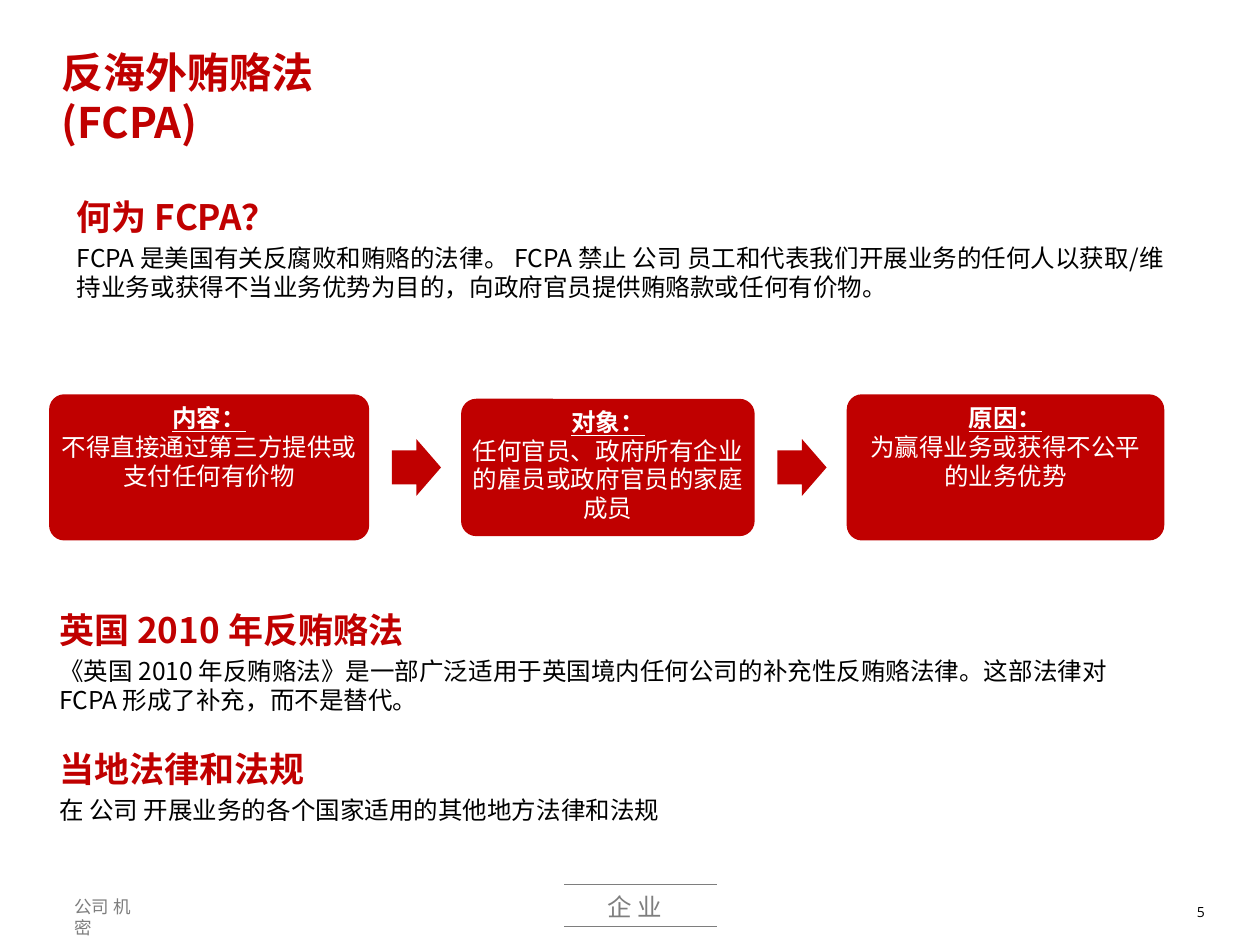
from lxml.etree import SubElement
from pptx import Presentation
from pptx.dml.color import RGBColor
from pptx.enum.shapes import MSO_CONNECTOR as Connector, MSO_SHAPE as Shape
from pptx.enum.text import PP_ALIGN as Align
from pptx.oxml.ns import qn
from pptx.util import Inches, Pt

COLORS = {"red": "C00000", "black": "000000", "white": "FFFFFF", "gray": "7E7E7E"}
CJK_FONT = "Noto Sans CJK SC"


def add_paragraph(frame, text, *, size=14, color="black", bold=False, underline=False,
                  font_name=CJK_FONT, align=Align.LEFT, before=0, spacing=None):
    """Write one formatted paragraph, using the frame's first one while it is empty."""
    paragraph = frame.paragraphs[0] if not frame.text else frame.add_paragraph()
    paragraph.alignment = align
    paragraph.space_before = Pt(before)
    if spacing is not None:
        paragraph.line_spacing = spacing
    run = paragraph.add_run()
    run.text = text
    font = run.font
    font.name, font.size, font.bold, font.underline = font_name, Pt(size), bold, underline
    font.color.rgb = RGBColor.from_string(COLORS[color])
    SubElement(run._r.get_or_add_rPr(), qn("a:ea")).set("typeface", font_name)


def add_text_frame(slide, left, top, width, height, inset_top=0.0, wrap=True):
    """Add a text box without side margins and return its frame."""
    box = slide.shapes.add_textbox(Inches(left), Inches(top), Inches(width), Inches(height))
    frame = box.text_frame
    frame.word_wrap = wrap
    frame.margin_left = frame.margin_right = frame.margin_bottom = 0
    frame.margin_top = Inches(inset_top)
    return frame


def add_red_shape(slide, kind, left, top, width, height, adjustments):
    """Add a plain red preset shape."""
    shape = slide.shapes.add_shape(kind, Inches(left), Inches(top), Inches(width), Inches(height))
    for index, value in enumerate(adjustments):
        shape.adjustments[index] = value
    shape.shadow.inherit = False
    shape.fill.solid()
    shape.fill.fore_color.rgb = RGBColor.from_string(COLORS["red"])
    shape.line.fill.background()


def add_title(slide, left, top, width, height):
    """Place the slide title."""
    frame = add_text_frame(slide, left, top, width, height, 0.02)
    add_paragraph(frame, "反海外贿赂法 (FCPA)", size=24, color="red", bold=True)


def add_sections(slide, left, top, width, height, sections):
    """Place headings, each followed by its body text."""
    frame = add_text_frame(slide, left, top, width, height, 0.07)
    for index, (heading, body) in enumerate(sections):
        add_paragraph(frame, heading, size=20, color="red", bold=True, before=18.6 if index else 0)
        add_paragraph(frame, body, before=3.1)


def add_card(slide, left, top, width, height, text_width, heading, body, spacing):
    """Place a rounded card with centred text."""
    add_red_shape(slide, Shape.ROUNDED_RECTANGLE, left, top, width, height, [0.12 / height])
    text_left = left + (width - text_width) / 2
    frame = add_text_frame(slide, text_left, top + 0.06, text_width, height - 0.15, 0.01)
    style = {"color": "white", "align": Align.CENTER}
    add_paragraph(frame, heading, bold=True, underline=True, spacing=Pt(16.6), **style)
    add_paragraph(frame, body, before=0.5, spacing=spacing, **style)


def add_flow(slide, middle):
    """Place three cards joined by block arrows around one horizontal axis."""
    cards = [
        (0.39, 2.54, 1.16, 2.37, "内容：", "不得直接通过第三方提供或 支付任何有价物", Pt(16.4)),
        (3.66, 2.33, 1.09, 2.17, "对象：", "任何官员、政府所有企业 的雇员或政府官员的家庭 成员", 0.97),
        (6.72, 2.52, 1.16, 2.17, "原因：", "为赢得业务或获得不公平 的业务优势", Pt(16.4)),
    ]
    for left, width, height, text_width, heading, body, spacing in cards:
        add_card(slide, left, middle - height / 2, width, height, text_width, heading, body, spacing)
    for left in (3.11, 6.17):
        add_red_shape(slide, Shape.RIGHT_ARROW, left, middle - 0.225, 0.39, 0.45, [0.6, 0.5])


def add_footer(slide, top):
    """Place the ruled label, the confidentiality note and the slide number."""
    for line_top in (top, top + 0.33):
        line = slide.shapes.add_connector(
            Connector.STRAIGHT, Inches(4.48), Inches(line_top), Inches(5.69), Inches(line_top))
        line.line.color.rgb = RGBColor.from_string(COLORS["gray"])
        line.line.width = Pt(0.5)
        SubElement(line._element.spPr, qn("a:effectLst"))
    label = add_text_frame(slide, 4.82, top + 0.07, 0.49, 0.22)
    add_paragraph(label, "企 业", color="gray", spacing=Pt(15.8))
    note = add_text_frame(slide, 0.59, top + 0.1, 0.58, 0.17)
    add_paragraph(note, "公司 机密", size=10, color="gray", spacing=Pt(11.6))
    number = add_text_frame(slide, 9.5, top + 0.1, 0.16, 0.24, 0.05, wrap=False)
    add_paragraph(number, "5", size=8, font_name="Open Sans")


def main():
    """Build and save the slide."""
    presentation = Presentation()
    presentation.slide_width, presentation.slide_height = Inches(10), Inches(7.5)
    slide = presentation.slides.add_slide(presentation.slide_layouts[6])
    add_title(slide, 0.49, 0.35, 3.05, 0.43)
    add_sections(slide, 0.61, 1.48, 8.65, 0.93, [
        ("何为 FCPA？",
         "FCPA 是美国有关反腐败和贿赂的法律。 FCPA 禁止 公司 员工和代表我们开展业务的任何人以获取/维 "
         "持业务或获得不当业务优势为目的，向政府官员提供贿赂款或任何有价物。"),
    ])
    add_flow(slide, 3.71)
    add_sections(slide, 0.47, 4.76, 8.39, 1.82, [
        ("英国 2010 年反贿赂法",
         "《英国 2010 年反贿赂法》是一部广泛适用于英国境内任何公司的补充性反贿赂法律。"
         "这部法律对 FCPA 形成了补充，而不是替代。"),
        ("当地法律和法规", "在 公司 开展业务的各个国家适用的其他地方法律和法规"),
    ])
    add_footer(slide, 7.02)
    presentation.save("out.pptx")


if __name__ == "__main__":
    main()
